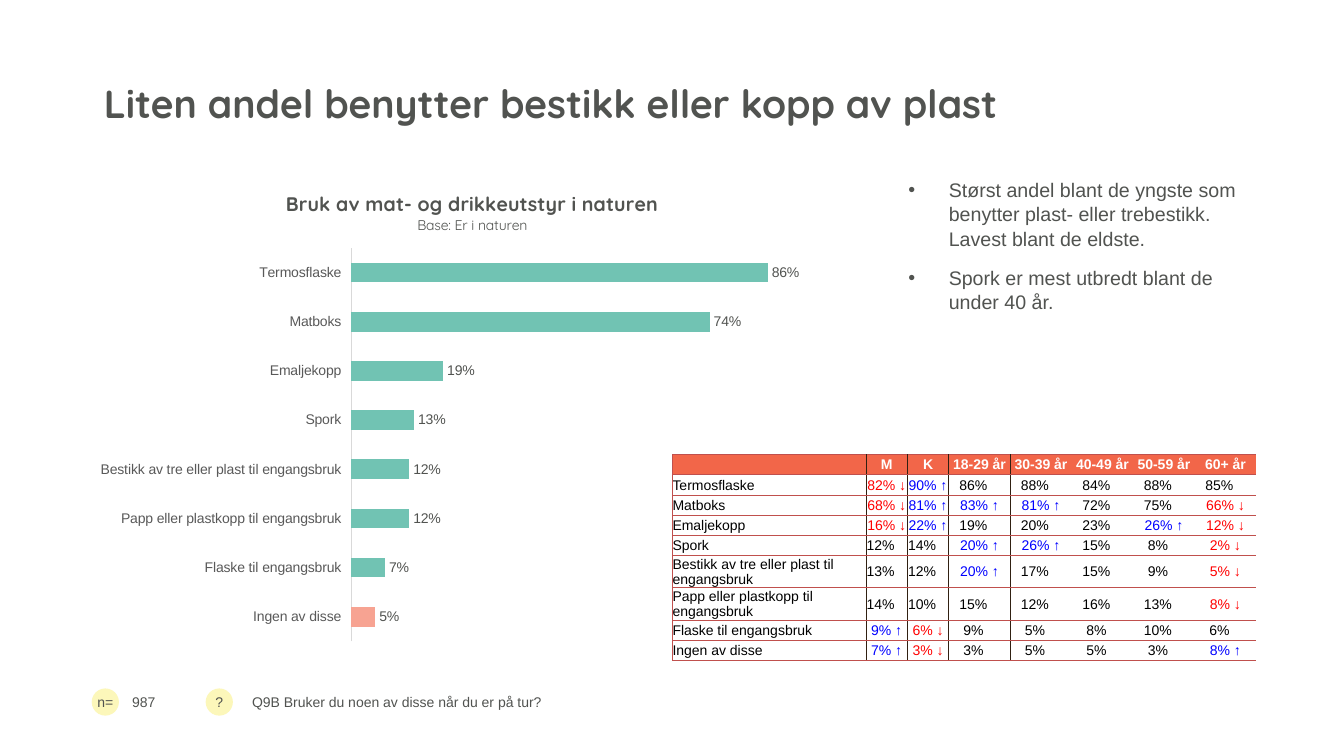
from lxml import etree
from pptx import Presentation
from pptx.chart.data import CategoryChartData
from pptx.dml.color import RGBColor
from pptx.enum.chart import XL_CHART_TYPE, XL_LABEL_POSITION, XL_TICK_LABEL_POSITION, XL_TICK_MARK
from pptx.enum.shapes import MSO_SHAPE
from pptx.enum.text import MSO_ANCHOR, MSO_AUTO_SIZE, PP_ALIGN
from pptx.oxml import parse_xml
from pptx.oxml.ns import nsdecls
from pptx.util import Inches, Pt

BAR_CLUSTERED = XL_CHART_TYPE.BAR_CLUSTERED
OUTSIDE_END = XL_LABEL_POSITION.OUTSIDE_END
LOW = XL_TICK_LABEL_POSITION.LOW
NO_TICK = XL_TICK_MARK.NONE
OVAL = MSO_SHAPE.OVAL
TOP, MIDDLE, BOTTOM = MSO_ANCHOR.TOP, MSO_ANCHOR.MIDDLE, MSO_ANCHOR.BOTTOM
NO_AUTOFIT = MSO_AUTO_SIZE.NONE
LEFT, CENTER = PP_ALIGN.LEFT, PP_ALIGN.CENTER

GREY, RED, BLUE, BLACK, WHITE = "515350", "FF0000", "0000FF", "000000", "FFFFFF"
BORDER_RED, BORDER_DARK = "C0504D", "302012"


def rgb(value):
    return RGBColor.from_string(value)


def add_text(paragraph, text, color=GREY, **font_format):
    run = paragraph.add_run()
    run.text = text
    values = {"name": "Arial", "size": Pt(10), "bold": False, **font_format}
    for name, value in values.items():
        setattr(run.font, name, value)
    run.font.color.rgb = rgb(color)


presentation = Presentation()
presentation.slide_width = Inches(13.33)
presentation.slide_height = Inches(7.5)
slide = presentation.slides.add_slide(presentation.slide_layouts[4])
title, question, bullets, sample_size, unused = slide.placeholders
unused.element.getparent().remove(unused.element)

placeholder_texts = [
    (title, (0.93, 0.39, 11.52, 0.92), BOTTOM, 0.9,
     ["Liten andel benytter bestikk eller kopp av plast"],
     {"name": "Quicksand", "size": Pt(28), "bold": True}),
    (question, (2.4, 6.67, 10.05, 0.58), MIDDLE, 1.0,
     ["Q9B Bruker du noen av disse når du er på tur?"], {}),
    (sample_size, (1.21, 6.83, 0.74, 0.27), MIDDLE, 1.0, ["987"], {}),
    (bullets, (8.91, 1.7, 3.54, 1.84), TOP, 1.05,
     ["Størst andel blant de yngste som benytter plast- eller trebestikk. Lavest blant de eldste.",
      "Spork er mest utbredt blant de under 40 år."], {"size": Pt(14)}),
]
for shape, place, anchor, line_spacing, texts, font_format in placeholder_texts:
    shape.left, shape.top, shape.width, shape.height = map(Inches, place)
    frame = shape.text_frame
    frame.auto_size = NO_AUTOFIT
    frame.word_wrap = True
    frame.vertical_anchor = anchor
    for index, text in enumerate(texts):
        paragraph = frame.add_paragraph() if index else frame.paragraphs[0]
        paragraph.alignment = LEFT
        paragraph.line_spacing = line_spacing
        paragraph.space_before = Pt(10 if index else 0)
        add_text(paragraph, text, **font_format)

for paragraph in bullets.text_frame.paragraphs:
    properties = paragraph._p.get_or_add_pPr()
    properties.set("marL", str(Inches(0.4)))
    properties.set("indent", str(-Inches(0.4)))

for left, text in [(0.91, "n="), (2.04, "?")]:
    badge = slide.shapes.add_shape(OVAL, Inches(left), Inches(6.83), Inches(0.27), Inches(0.27))
    badge.shadow.inherit = False
    badge.fill.solid()
    badge.fill.fore_color.rgb = rgb("FCF7BA")
    badge.line.fill.background()
    frame = badge.text_frame
    frame.word_wrap = False
    frame.vertical_anchor = MIDDLE
    for side in ("left", "right", "top", "bottom"):
        setattr(frame, f"margin_{side}", 0)
    frame.paragraphs[0].alignment = CENTER
    add_text(frame.paragraphs[0], text)

usage = [
    ("Termosflaske", 0.86, "82% ↓|90% ↑|86%|88%|84%|88%|85%"),
    ("Matboks", 0.74, "68% ↓|81% ↑|83% ↑|81% ↑|72%|75%|66% ↓"),
    ("Emaljekopp", 0.19, "16% ↓|22% ↑|19%|20%|23%|26% ↑|12% ↓"),
    ("Spork", 0.13, "12%|14%|20% ↑|26% ↑|15%|8%|2% ↓"),
    ("Bestikk av tre eller plast til engangsbruk", 0.12, "13%|12%|20% ↑|17%|15%|9%|5% ↓"),
    ("Papp eller plastkopp til engangsbruk", 0.12, "14%|10%|15%|12%|16%|13%|8% ↓"),
    ("Flaske til engangsbruk", 0.07, "9% ↑|6% ↓|9%|5%|8%|10%|6%"),
    ("Ingen av disse", 0.05, "7% ↑|3% ↓|3%|5%|5%|3%|8% ↑"),
]

chart_data = CategoryChartData(number_format="0%")
chart_data.categories = [label for label, share, groups in usage]
chart_data.add_series("Series 1", [share for label, share, groups in usage])
chart = slide.shapes.add_chart(
    BAR_CLUSTERED, Inches(0.93), Inches(1.7), Inches(7.51), Inches(4.76), chart_data).chart
chart.has_legend = False
chart.font.name = "Arial"
chart.font.size = Pt(10)
chart.font.color.rgb = rgb(GREY)

title_frame = chart.chart_title.text_frame
add_text(title_frame.paragraphs[0], "Bruk av mat- og drikkeutstyr i naturen",
         name="Quicksand", size=Pt(14), bold=True)
add_text(title_frame.add_paragraph(), "Base: Er i naturen", name="Quicksand")

category_axis = chart.category_axis
category_axis.reverse_order = True
category_axis.major_tick_mark = NO_TICK
category_axis.tick_label_position = LOW
category_axis.tick_labels.font.size = Pt(10)
category_axis.tick_labels.font.color.rgb = rgb("595959")
category_axis.format.line.color.rgb = rgb("D9D9D9")
category_axis.format.line.width = Pt(0.75)
value_axis = chart.value_axis
value_axis.visible = False
value_axis.has_major_gridlines = False
value_axis.minimum_scale = 0
value_axis.maximum_scale = 1

plot = chart.plots[0]
plot.gap_width = 150
plot.vary_by_categories = False
plot.has_data_labels = True
labels = plot.data_labels
labels.show_value = True
labels.number_format = "0%"
labels.number_format_is_linked = False
labels.position = OUTSIDE_END
series = plot.series[0]
none_bar = series.points[len(usage) - 1]
for bar, color in [(series, "71C3B3"), (none_bar, "F7A392")]:
    bar.format.fill.solid()
    bar.format.fill.fore_color.rgb = rgb(color)

plot_area = chart._chartSpace.chart.plotArea
for layout in plot_area.findall("{*}layout"):
    plot_area.remove(layout)
plot_area.insert(0, parse_xml(
    f'<c:layout {nsdecls("c")}><c:manualLayout><c:layoutTarget val="inner"/>'
    '<c:xMode val="edge"/><c:yMode val="edge"/><c:x val="0.34"/><c:y val="0.16"/>'
    '<c:w val="0.64"/><c:h val="0.82"/></c:manualLayout></c:layout>'))

header = ["", "M", "K", "18-29 år", "30-39 år", "40-49 år", "50-59 år", "60+ år"]
rows = [header] + [[label, *groups.split("|")] for label, share, groups in usage]
column_widths = [1.92] + [0.41] * 2 + [0.61] * 5
row_heights = [0.2] * 5 + [0.32] * 2 + [0.2] * 2
table = slide.shapes.add_table(
    len(rows), len(header), Inches(6.67), Inches(4.51),
    Inches(sum(column_widths)), Inches(sum(row_heights))).table
table.first_row = table.horz_banding = False
table._tbl.tblPr[0].text = "{2D5ABB26-0587-4C30-8999-92F81FD0307C}"
for column, width in zip(table.columns, column_widths):
    column.width = Inches(width)
for row, height in zip(table.rows, row_heights):
    row.height = Inches(height)

left_borders = {0: BORDER_RED, 1: BORDER_DARK, 3: BORDER_DARK}
right_borders = {0: BORDER_DARK, 2: BORDER_DARK}
arrow_colors = {"↓": RED, "↑": BLUE}
for row_index, texts in enumerate(rows):
    for column_index, text in enumerate(texts):
        cell = table.cell(row_index, column_index)
        cell.vertical_anchor = MIDDLE
        cell.margin_left = cell.margin_bottom = 0
        cell.margin_top = Inches(0.01)
        cell.margin_right = Inches(0.12 if text.endswith("%") else 0)
        paragraph = cell.text_frame.paragraphs[0]
        paragraph.alignment = CENTER if column_index else LEFT
        if text:
            color = arrow_colors.get(text[-1], BLACK) if row_index else WHITE
            add_text(paragraph, text, color, bold=row_index == 0)
        else:
            paragraph._p.get_or_add_endParaRPr().set("sz", "1000")

        cell_properties = cell._tc.get_or_add_tcPr()
        borders = {"lnL": left_borders.get(column_index), "lnR": right_borders.get(column_index),
                   "lnT": BORDER_RED, "lnB": BORDER_RED}
        for tag, border_color in borders.items():
            if border_color:
                border = parse_xml(f'<a:{tag} {nsdecls("a")} w="{Pt(0.5)}"/>')
                fill = etree.SubElement(border, border.tag.replace(tag, "solidFill"))
                etree.SubElement(fill, border.tag.replace(tag, "srgbClr"), val=border_color)
                cell_properties.append(border)
        if row_index:
            cell.fill.background()
        else:
            cell.fill.solid()
            cell.fill.fore_color.rgb = rgb("F26649")

presentation.save("out.pptx")
